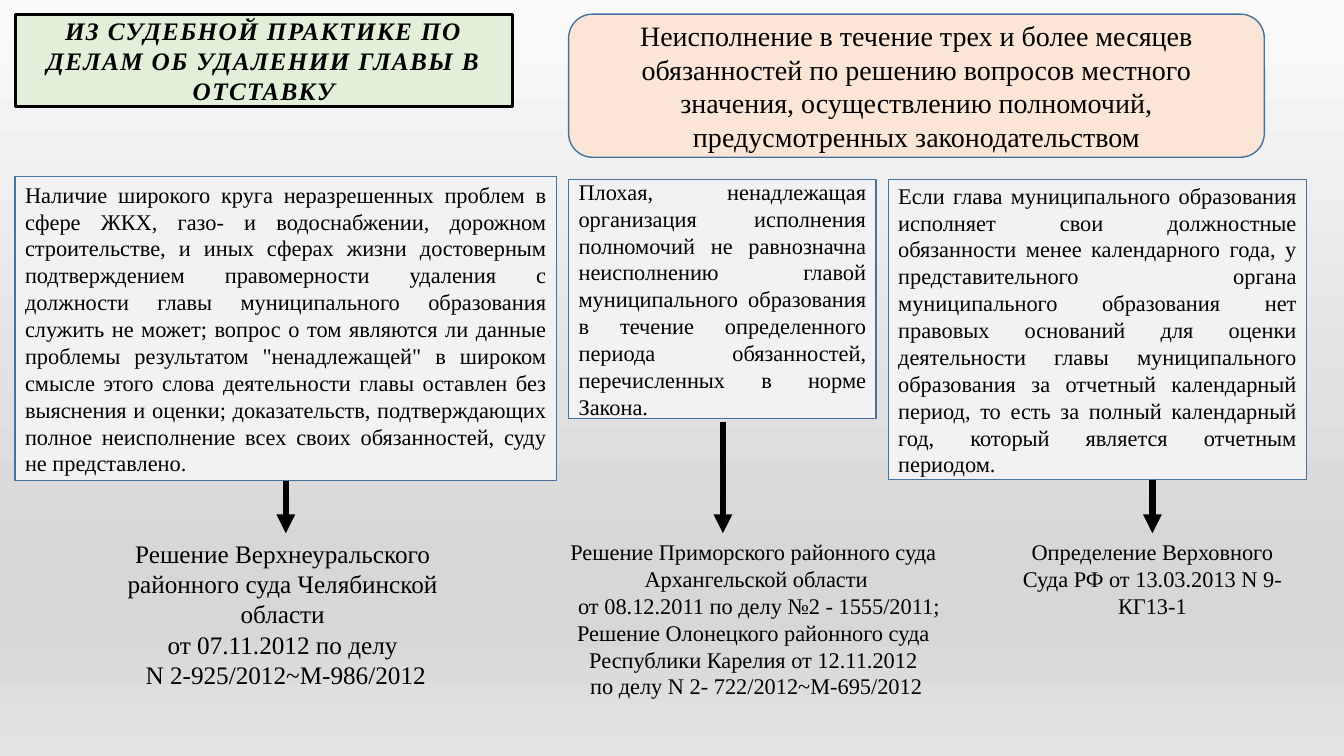
from lxml import etree
from pptx import Presentation
from pptx import util as u
from pptx.dml import color
from pptx.enum import shapes, text
from pptx.oxml import ns

FONT = "Times New Roman"
BLACK, BLUE = "000000", "43739E"
GREEN, PEACH, GRAY = "E2F0D9", "FBE5D6", "F2F2F2"
BACKGROUND_STOPS = [(0, "FAFAFA"), (74, "D7D7D7"), (83, "D7D7D7"), (100, "E4E4E4")]
RULING_TOP = 5.29

TITLE = "ИЗ СУДЕБНОЙ ПРАКТИКЕ ПО ДЕЛАМ ОБ УДАЛЕНИИ ГЛАВЫ В ОТСТАВКУ"
GROUND = ("Неисполнение в течение трех и более месяцев обязанностей по решению вопросов "
          "местного значения, осуществлению полномочий, предусмотренных законодательством")

# Each column: position box, position text, ruling box, ruling lines, size, wrap,
# arrow x and start, and which arrow ends are joined
COLUMNS = [
    dict(
        position_box=(0.15, 1.75, 5.37, 3.02),
        position="Наличие широкого круга неразрешенных проблем в сфере ЖКХ, газо- и "
                 "водоснабжении, дорожном строительстве, и иных сферах жизни достоверным "
                 "подтверждением правомерности удаления с должности главы муниципального "
                 "образования служить не может; вопрос о том являются ли данные проблемы "
                 "результатом \"ненадлежащей\" в широком смысле этого слова деятельности "
                 "главы оставлен без выяснения и оценки; доказательств, подтверждающих "
                 "полное неисполнение всех своих обязанностей, суду не представлено.",
        ruling_box=(1.15, RULING_TOP, 3.37, 1.62),
        ruling=["Решение Верхнеуральского ", "районного суда Челябинской ", "области ",
                "от 07.11.2012 по делу ", "N 2-925/2012~М-986/2012"],
        size=18, wrap=False, arrow=(2.84, 4.77), join_start=True, join_end=True),
    dict(
        position_box=(5.64, 1.78, 3.05, 2.37),
        position="Плохая, ненадлежащая организация исполнения полномочий не равнозначна "
                 "неисполнению главой муниципального образования в течение определенного "
                 "периода обязанностей, перечисленных в норме Закона. ",
        ruling_box=(5.53, RULING_TOP, 3.94, 1.72),
        ruling=["Решение Приморского районного суда ", "Архангельской области",
                " от 08.12.2011 по делу №2 - 1555/2011;",
                "Решение Олонецкого районного суда ", "Республики Карелия от 12.11.2012 ",
                "по делу N 2- 722/2012~М-695/2012"],
        size=16, wrap=False, arrow=(7.17, 4.19), join_start=False, join_end=False),
    dict(
        position_box=(8.81, 1.78, 4.15, 2.98),
        position="Если глава муниципального образования исполняет свои должностные "
                 "обязанности менее календарного года, у представительного органа "
                 "муниципального образования нет правовых оснований для оценки "
                 "деятельности главы муниципального образования за отчетный календарный "
                 "период, то есть за полный календарный год, который является отчетным "
                 "периодом. ",
        ruling_box=(9.9, RULING_TOP, 3.06, 0.91),
        ruling=["Определение Верховного Суда РФ от 13.03.2013 N 9-КГ13-1"],
        size=16, wrap=True, arrow=(11.43, 4.76), join_start=False, join_end=True),
]


def rgb(value):
    return color.RGBColor.from_string(value)


def inches(box):
    return [u.Inches(length) for length in box]


def paint(shape, fill, line, width):
    shape.fill.solid()
    shape.fill.fore_color.rgb = rgb(fill)
    shape.line.color.rgb = rgb(line)
    shape.line.width = u.Pt(width)


def write(shape, lines, size, align):
    frame = shape.text_frame
    frame.word_wrap = True
    frame.text = "\n".join(lines)
    for paragraph in frame.paragraphs:
        paragraph.alignment = align
        paragraph.font.name = FONT
        paragraph.font.size = u.Pt(size)
        paragraph.font.color.rgb = rgb(BLACK)
    return frame


def set_background(slide):
    fill = slide.background.fill
    fill.gradient()
    fill.gradient_angle = 270
    stops = slide.element.find(".//" + ns.qn("a:gsLst"))
    for stop in list(stops):
        stops.remove(stop)
    for percent, value in BACKGROUND_STOPS:
        stop = etree.SubElement(stops, ns.qn("a:gs"), pos=str(percent * 1000))
        etree.SubElement(stop, ns.qn("a:srgbClr"), val=value)


def add_title(slide, box):
    title = slide.shapes.title
    title.left, title.top, title.width, title.height = inches(box)
    paint(title, GREEN, BLACK, 2.25)
    frame = write(title, [TITLE], 18, text.PP_ALIGN.CENTER)
    frame.auto_size = text.MSO_AUTO_SIZE.NONE
    frame.vertical_anchor = text.MSO_ANCHOR.MIDDLE
    paragraph = frame.paragraphs[0]
    paragraph.font.bold = paragraph.font.italic = True
    # Letter spacing of one point
    paragraph.runs[0].font._element.set("spc", "100")


def add_panel(slide, box, kind, fill, content, size, align):
    panel = slide.shapes.add_shape(kind, *inches(box))
    panel.shadow.inherit = False
    paint(panel, fill, BLUE, 1)
    frame = write(panel, [content], size, align)
    frame.vertical_anchor = text.MSO_ANCHOR.MIDDLE
    return panel


def add_arrow(slide, x, top, bottom):
    arrow = slide.shapes.add_connector(
        shapes.MSO_CONNECTOR.STRAIGHT, *inches((x, top, x, bottom)))
    arrow.line.color.rgb = rgb(BLACK)
    arrow.line.width = u.Pt(4.5)
    etree.SubElement(arrow.line._get_or_add_ln(), ns.qn("a:tailEnd"), type="triangle")
    etree.SubElement(arrow._element.spPr, ns.qn("a:effectLst"))
    return arrow


def add_column(slide, column):
    # Court's position
    panel = add_panel(slide, column["position_box"], shapes.MSO_SHAPE.RECTANGLE, GRAY,
                      column["position"], 16, text.PP_ALIGN.JUSTIFY)

    # Ruling it comes from
    ruling = slide.shapes.add_textbox(*inches(column["ruling_box"]))
    frame = write(ruling, column["ruling"], column["size"], text.PP_ALIGN.CENTER)
    frame.word_wrap = column["wrap"]
    frame.auto_size = text.MSO_AUTO_SIZE.SHAPE_TO_FIT_TEXT

    # Arrow from position to ruling
    x, top = column["arrow"]
    arrow = add_arrow(slide, x, top, RULING_TOP)
    if column["join_start"]:
        arrow.begin_connect(panel, 2)
    if column["join_end"]:
        arrow.end_connect(ruling, 0)


def main():
    presentation = Presentation()
    presentation.slide_width = u.Inches(13.33)
    presentation.slide_height = u.Inches(7.5)
    slide = presentation.slides.add_slide(presentation.slide_layouts[5])
    set_background(slide)

    # Heading row
    add_title(slide, (0.15, 0.14, 4.93, 0.92))
    add_panel(slide, (5.64, 0.14, 6.9, 1.42), shapes.MSO_SHAPE.ROUNDED_RECTANGLE, PEACH,
              GROUND, 20, text.PP_ALIGN.CENTER)

    # Three court positions with their rulings
    for column in COLUMNS:
        add_column(slide, column)

    presentation.save("out.pptx")


if __name__ == "__main__":
    main()
